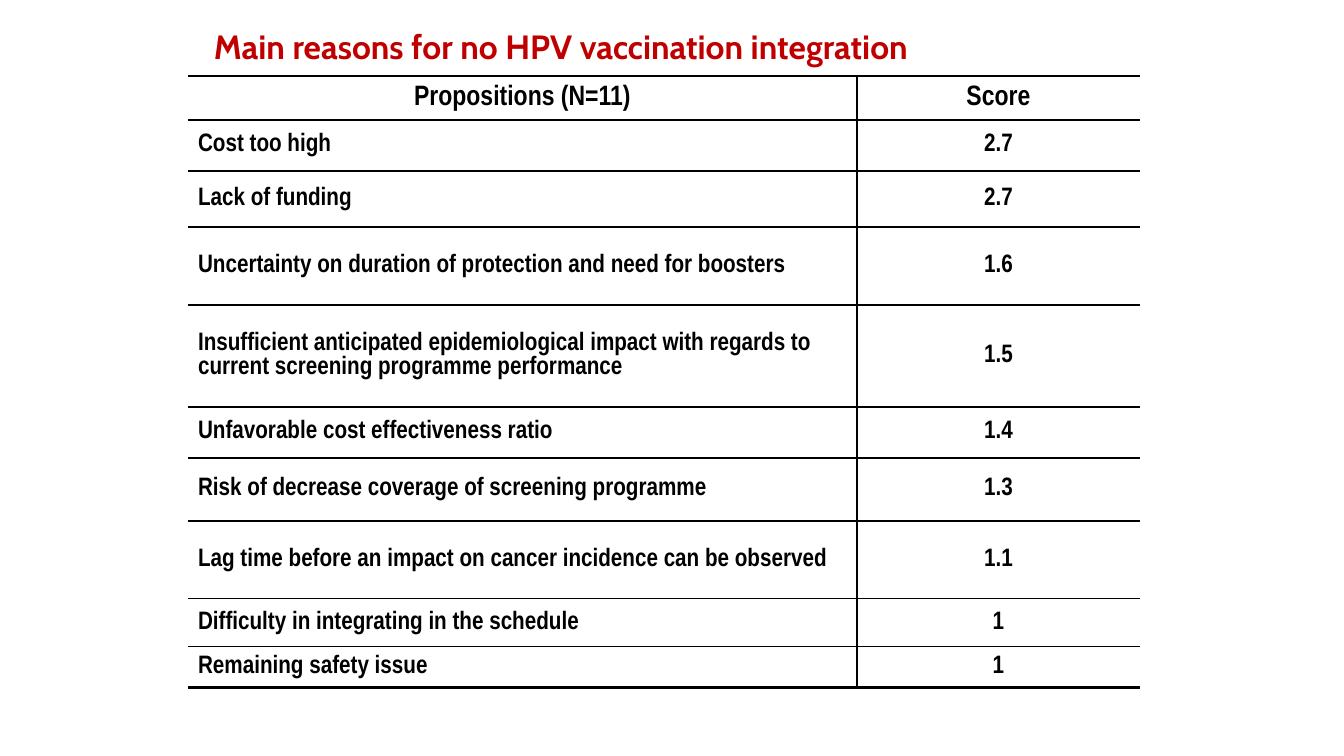
from dataclasses import dataclass

from lxml.etree import SubElement
from pptx import Presentation
from pptx.dml.color import RGBColor
from pptx.enum.text import MSO_ANCHOR as Anchor, MSO_AUTO_SIZE as AutoSize, PP_ALIGN as Align
from pptx.oxml.ns import qn
from pptx.util import Pt

TITLE = "Main reasons for no HPV vaccination integration"
HEADER = ("Propositions (N=11)", "Score")
REASONS = [
    ("Cost too high", "2.7", 51),
    ("Lack of funding", "2.7", 56),
    ("Uncertainty on duration of protection and need for boosters", "1.6", 78),
    ("Insufficient anticipated epidemiological impact with regards to "
     "current screening programme performance", "1.5", 102),
    ("Unfavorable cost effectiveness ratio", "1.4", 51),
    ("Risk of decrease coverage of screening programme", "1.3", 63),
    ("Lag time before an impact on cancer incidence can be observed", "1.1", 78),
    ("Difficulty in integrating in the schedule", "1", 48),
    ("Remaining safety issue", "1", 40),
]
ROWS = [(*HEADER, 44), *REASONS]
COLUMN_WIDTHS = (669, 283)
TITLE_BOX = (204, 25, 842, 46)
TABLE_LEFT, TABLE_TOP = 188, 76


@dataclass(frozen=True)
class Theme:
    title_font: str = "Cabin"
    table_font: str = "Arial Narrow"
    accent: str = "C00000"
    ink: str = "000000"
    title_size: int = 24
    header_size: int = 20
    body_size: int = 18
    thin: float = 1
    thick: float = 2.25


THEME = Theme()


def px(n):
    return round(n * 914400 / 100.8)


def write(tf, text, font=THEME.table_font, size=THEME.body_size,
          color=THEME.ink, align=Align.LEFT, spacing=None):
    tf.word_wrap = True
    p = tf.paragraphs[0]
    p.alignment = align
    p.line_spacing = spacing
    r = p.add_run()
    r.text = text
    r.font.name = font
    r.font.size = Pt(size)
    r.font.bold = True
    r.font.color.rgb = RGBColor.from_string(color)


def set_borders(cell, widths):
    tc_pr = cell._tc.get_or_add_tcPr()
    for i, (side, width) in enumerate(widths.items()):
        ln = SubElement(tc_pr, qn(f"a:{side}"), w=str(Pt(width)))
        if width:
            fill = SubElement(ln, qn("a:solidFill"))
            SubElement(fill, qn("a:srgbClr"), val=THEME.ink)
        else:
            SubElement(ln, qn("a:noFill"))
        tc_pr.remove(ln)
        tc_pr.insert(i, ln)


def add_title(s):
    tf = s.shapes.add_textbox(*map(px, TITLE_BOX)).text_frame
    write(tf, TITLE, font=THEME.title_font, size=THEME.title_size,
          color=THEME.accent, spacing=0.9)
    tf.auto_size = AutoSize.SHAPE_TO_FIT_TEXT


def add_scores(s):
    heights = [row[-1] for row in ROWS]
    table = s.shapes.add_table(
        len(ROWS), len(COLUMN_WIDTHS), px(TABLE_LEFT), px(TABLE_TOP),
        px(sum(COLUMN_WIDTHS)), px(sum(heights))).table
    table.first_row = table.horz_banding = False
    for column, width in zip(table.columns, COLUMN_WIDTHS):
        column.width = px(width)
    thick_edges = (0, 1, len(ROWS))
    for i, (*texts, height) in enumerate(ROWS):
        table.rows[i].height = px(height)
        top, bottom = (THEME.thick if edge in thick_edges else THEME.thin
                       for edge in (i, i + 1))
        for j, text in enumerate(texts):
            cell = table.cell(i, j)
            cell.fill.background()
            cell.vertical_anchor = Anchor.MIDDLE
            write(cell.text_frame, text,
                  size=THEME.body_size if i else THEME.header_size,
                  align=Align.LEFT if i and not j else Align.CENTER)
            set_borders(cell, {"lnL": THEME.thin if j else 0,
                               "lnR": 0 if j else THEME.thin,
                               "lnT": top, "lnB": bottom})


def main():
    prs = Presentation()
    prs.slide_width, prs.slide_height = px(1344), px(756)
    s = prs.slides.add_slide(prs.slide_layouts[6])
    add_title(s)
    add_scores(s)
    prs.save("out.pptx")


if __name__ == "__main__":
    main()
